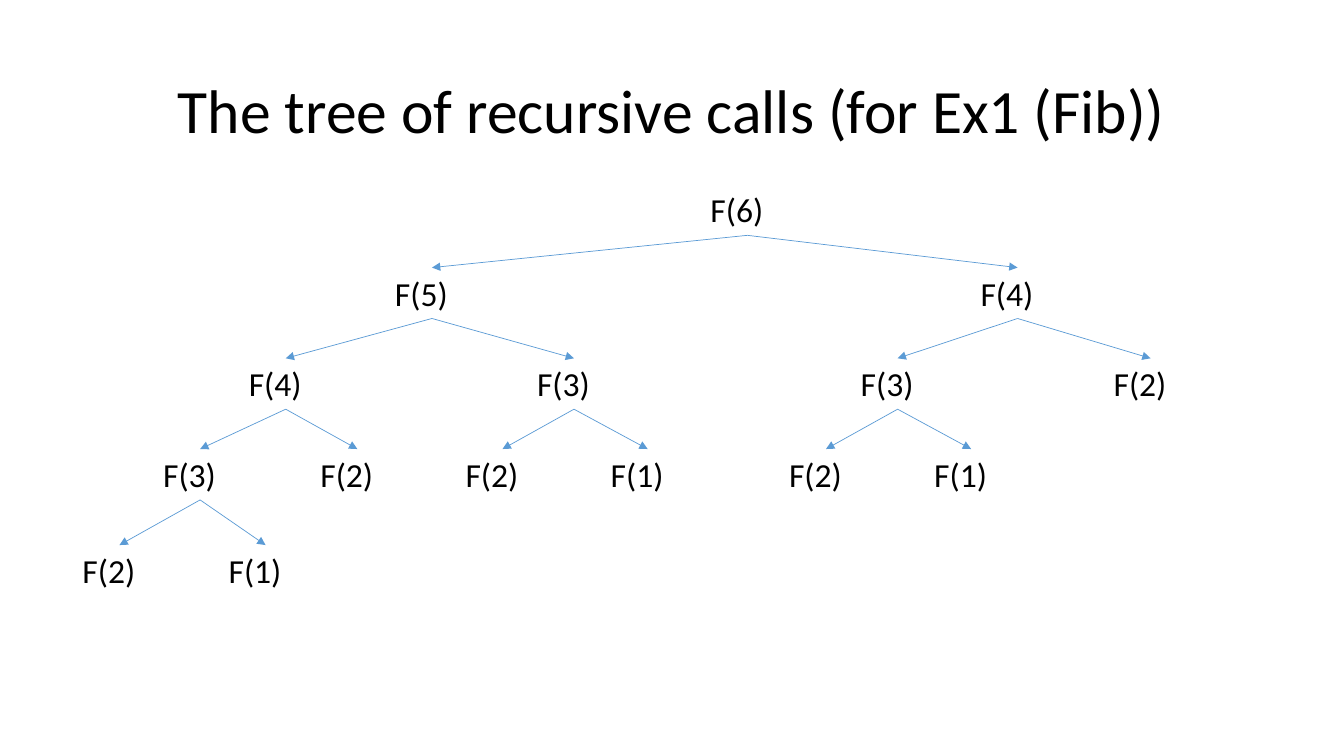
from lxml import etree
from pptx import Presentation
from pptx import util as u
from pptx.dml.color import RGBColor
from pptx.enum import shapes, text
from pptx.oxml.ns import qn

ROW_TOPS = [24.4, 35.4, 47.4, 59.4, 72.1]
CENTERS_IN_CALL_ORDER = [
    55.61, 32.14, 21.26, 14.89, 8.89, 19.76, 26.59, 42.71,
    37.39, 48.19, 75.71, 66.79, 61.46, 72.26, 85.61,
]
NODE_WIDTH, NODE_HEIGHT = 6.98, 6.73
TOP, BOTTOM = 0, 2


def color(value):
    return RGBColor.from_string(value)


def apply_format(target, values):
    for name, value in values.items():
        setattr(target, name, value)


class TreeSlide:
    font = {"name": "Calibri"}
    text_color = "000000"
    line_color = "5B9BD5"
    line_width = u.Pt(0.5)

    def __init__(self, presentation):
        self.width = presentation.slide_width
        self.height = presentation.slide_height
        self.slide = presentation.slides.add_slide(presentation.slide_layouts[6])

    def across(self, percent):
        return round(self.width * percent / 100)

    def down(self, percent):
        return round(self.height * percent / 100)

    def label(self, content, left, top, width, height, size, frame=None, paragraph_format=None):
        shape = self.slide.shapes.add_textbox(
            self.across(left), self.down(top), self.across(width), self.down(height))
        apply_format(shape.text_frame, {"word_wrap": True, **(frame or {})})
        paragraph = shape.text_frame.paragraphs[0]
        apply_format(paragraph, paragraph_format or {})
        run = paragraph.add_run()
        run.text = content
        apply_format(run.font, {**self.font, "size": u.Pt(size)})
        run.font.color.rgb = color(self.text_color)
        return shape

    def title(self, content):
        self.label(content, 6.88, 5.33, 86.25, 19.33, 44,
                   {"vertical_anchor": text.MSO_ANCHOR.MIDDLE},
                   {"alignment": text.PP_ALIGN.CENTER, "line_spacing": 0.9})

    def node(self, number, center, row):
        return self.label(f"F({number})", center - NODE_WIDTH / 2, ROW_TOPS[row],
                          NODE_WIDTH, NODE_HEIGHT, 24,
                          {"auto_size": text.MSO_AUTO_SIZE.SHAPE_TO_FIT_TEXT})

    def arrow(self, caller, callee):
        connector = self.slide.shapes.add_connector(shapes.MSO_CONNECTOR.STRAIGHT, 0, 0, 0, 0)
        connector.begin_connect(caller, BOTTOM)
        connector.end_connect(callee, TOP)
        connector.line.color.rgb = color(self.line_color)
        connector.line.width = self.line_width
        etree.SubElement(connector.line._get_or_add_ln(), qn("a:tailEnd"), type="triangle")
        etree.SubElement(connector._element.spPr, qn("a:effectLst"))

    def calls(self, number, centers, row=0):
        caller = self.node(number, next(centers), row)
        if number > 2:
            for argument in (number - 1, number - 2):
                self.arrow(caller, self.calls(argument, centers, row + 1))
        return caller


def main():
    presentation = Presentation()
    apply_format(presentation, {"slide_width": u.Inches(13.33), "slide_height": u.Inches(7.5)})
    tree_slide = TreeSlide(presentation)
    tree_slide.title("The tree of recursive calls (for Ex1 (Fib))")
    tree_slide.calls(6, iter(CENTERS_IN_CALL_ORDER))
    presentation.save("out.pptx")


if __name__ == "__main__":
    main()
